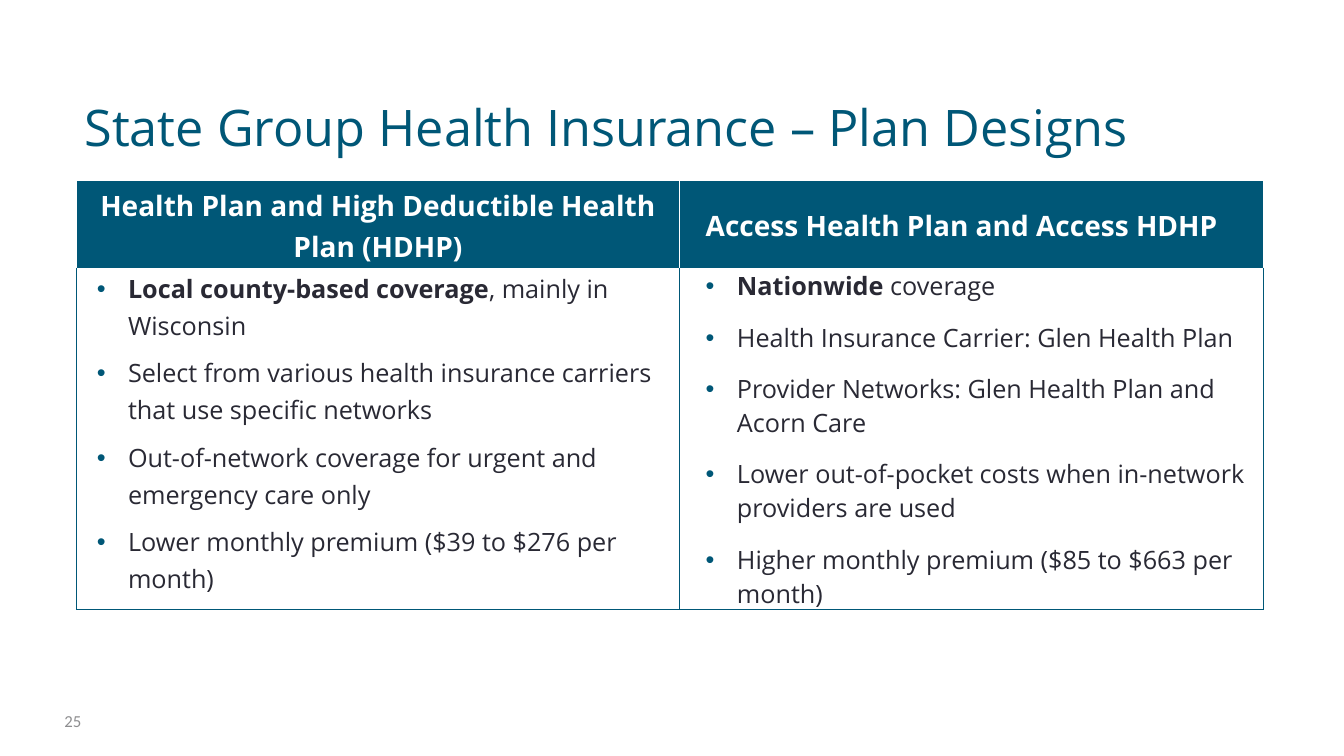
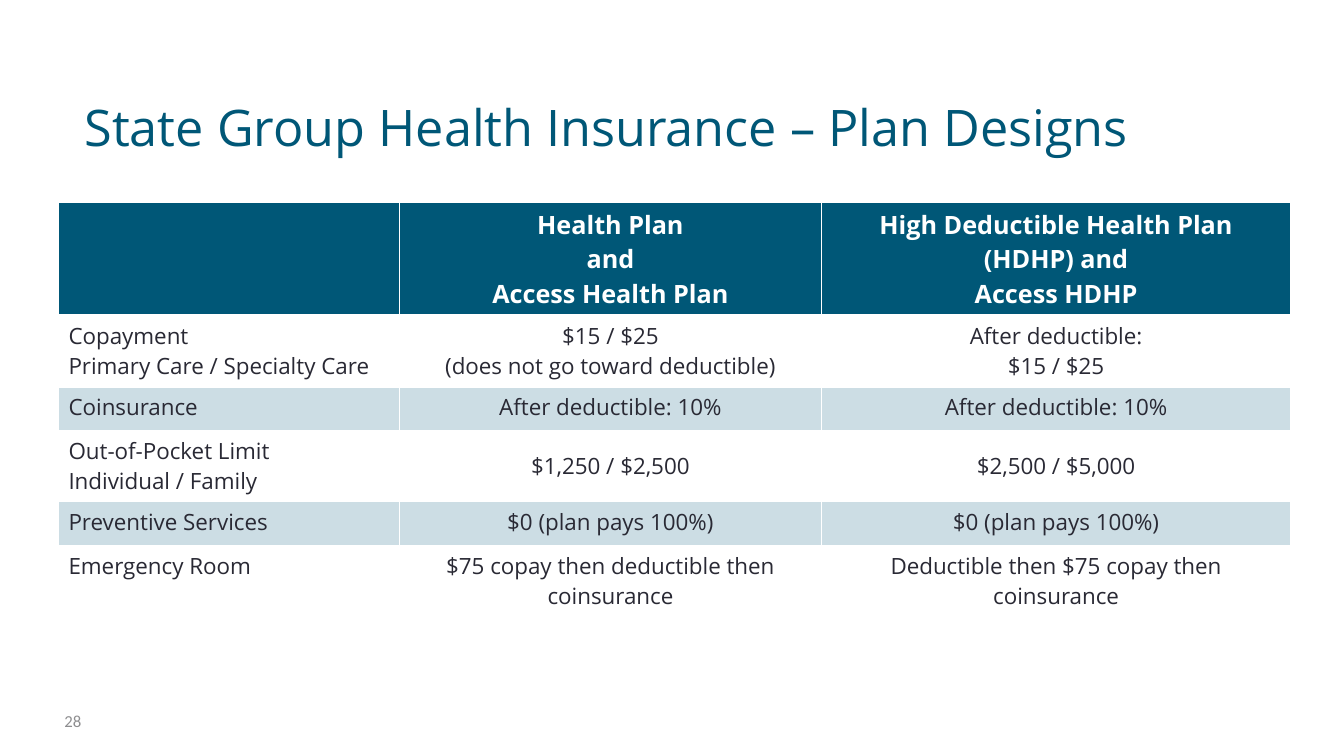
"""Build two slides that compare the state group health insurance plan designs."""
from dataclasses import dataclass, replace

from lxml import etree
from pptx import Presentation
from pptx.dml.color import RGBColor
from pptx.enum.text import MSO_ANCHOR, PP_ALIGN
from pptx.oxml.ns import qn
from pptx.util import Inches, Pt

LEFT, CENTER = PP_ALIGN.LEFT, PP_ALIGN.CENTER
TOP, MIDDLE, BOTTOM = MSO_ANCHOR.TOP, MSO_ANCHOR.MIDDLE, MSO_ANCHOR.BOTTOM
BLANK_LAYOUT = 6


@dataclass(frozen=True)
class Theme:
    teal: str = "005777"
    ink: str = "292934"
    white: str = "FFFFFF"
    band: str = "CCDDE4"
    grey: str = "8E8E90"
    font: str = "Open Sans"
    number_font: str = "Calibri"
    title_size: int = 36
    large_size: int = 20
    medium_size: int = 18
    small_size: int = 16
    number_size: int = 12


THEME = Theme()


@dataclass(frozen=True)
class TextStyle:
    size: int
    color: str
    font: str = THEME.font
    bold: bool = False
    align: PP_ALIGN = LEFT
    margin: float = 0
    indent: float = 0
    before: int = 0
    after: int = 0
    spacing: float = 1.0
    bullet: bool = False


@dataclass(frozen=True)
class Line:
    text: str
    lead: str = ""


@dataclass(frozen=True)
class Edge:
    color: str = THEME.white
    width: int = 1


@dataclass(frozen=True)
class Borders:
    left: Edge = Edge()
    right: Edge = Edge()
    top: Edge = Edge()
    bottom: Edge = Edge()


@dataclass(frozen=True)
class Insets:
    left: float = 0.1
    top: float = 0.05
    right: float = 0.1
    bottom: float = 0.05


@dataclass(frozen=True)
class Cell:
    lines: tuple[Line, ...]
    style: TextStyle
    fill: str | None = None
    anchor: MSO_ANCHOR = TOP
    borders: Borders = Borders()
    insets: Insets = Insets()


@dataclass(frozen=True)
class Grid:
    left: float
    top: float
    columns: tuple[float, ...]
    rows: tuple[float, ...]
    cells: list[list[Cell]]


TITLE = TextStyle(THEME.title_size, THEME.teal)
PAGE_NUMBER = TextStyle(THEME.number_size, THEME.grey, THEME.number_font)
COVERAGE_HEAD = TextStyle(THEME.large_size, THEME.white, bold=True, after=8, spacing=1.07)
LOCAL_BULLET = TextStyle(THEME.medium_size, THEME.ink, margin=0.44, indent=-0.31,
                         after=8, spacing=1.07, bullet=True)
NATIONWIDE_BULLET = replace(LOCAL_BULLET, margin=0.5, before=6, after=6, spacing=1.0)
COST_HEAD = TextStyle(THEME.medium_size, THEME.white, bold=True, align=CENTER)
COST_LABEL = TextStyle(THEME.small_size, THEME.ink)
COST_VALUE = replace(COST_LABEL, align=CENTER)

NARROW = Insets(0.07, 0.01, 0.07, 0)
TEAL_EDGE = Edge(THEME.teal)
THICK_EDGE = Edge(width=3)
TEAL_FRAME = Borders(TEAL_EDGE, TEAL_EDGE, Edge(), TEAL_EDGE)

SLIDE_TITLE = "State Group Health Insurance – Plan Designs"
LOCAL_LINES = (
    Line(", mainly in Wisconsin", "Local county-based coverage"),
    Line("Select from various health insurance carriers that use specific networks"),
    Line("Out-of-network coverage for urgent and emergency care only"),
    Line("Lower monthly premium ($39 to $276 per month)"),
)
NATIONWIDE_LINES = (
    Line(" coverage", "Nationwide"),
    Line("Health Insurance Carrier: Glen Health Plan"),
    Line("Provider Networks: Glen Health Plan and Acorn Care"),
    Line("Lower out-of-pocket costs when in-network providers are used"),
    Line("Higher monthly premium ($85 to $663 per month)"),
)
COST_HEADINGS = (
    "",
    "Health Plan\nand\nAccess Health Plan",
    "High Deductible Health Plan (HDHP) and\nAccess HDHP",
)
COST_ROWS = (
    ("Copayment\nPrimary Care / Specialty Care",
     "$15 / $25\n(does not go toward deductible)", "After deductible:\n$15 / $25"),
    ("Coinsurance", "After deductible: 10%", "After deductible: 10%"),
    ("Out-of-Pocket Limit\nIndividual / Family", "$1,250 / $2,500", "$2,500 / $5,000"),
    ("Preventive Services", "$0 (plan pays 100%)", "$0 (plan pays 100%)"),
    ("Emergency Room", "$75 copay then deductible then coinsurance",
     "Deductible then $75 copay then coinsurance"),
)
LIMIT_ROW = 2


def split_lines(text: str) -> tuple[Line, ...]:
    return tuple(Line(part) for part in text.split("\n"))


def coverage_grid() -> Grid:
    head = Cell(split_lines("Health Plan and High Deductible Health Plan (HDHP)"),
                replace(COVERAGE_HEAD, align=CENTER), THEME.teal, MIDDLE, insets=NARROW)
    access_head = replace(head, lines=split_lines("Access Health Plan and Access HDHP"),
                          style=replace(COVERAGE_HEAD, margin=0.19))
    local = Cell(LOCAL_LINES, LOCAL_BULLET, borders=TEAL_FRAME, insets=NARROW)
    nationwide = replace(local, lines=NATIONWIDE_LINES, style=NATIONWIDE_BULLET)
    return Grid(0.76, 1.79, (5.98, 5.79), (0.87, 3.39),
                [[head, access_head], [local, nationwide]])


def cost_grid() -> Grid:
    cells = [[Cell(split_lines(text), COST_HEAD, THEME.teal,
                   borders=Borders(bottom=THICK_EDGE)) for text in COST_HEADINGS]]
    for row, texts in enumerate(COST_ROWS):
        fill = THEME.band if row % 2 else THEME.white
        borders = Borders(top=Edge() if row else THICK_EDGE)
        value_anchor = MIDDLE if row == LIMIT_ROW else TOP
        label, *values = texts
        cells.append([Cell(split_lines(label), COST_LABEL, fill, borders=borders)]
                     + [Cell(split_lines(value), COST_VALUE, fill, value_anchor, borders)
                        for value in values])
    return Grid(0.58, 2.01, (3.38, 4.19, 4.65), (1.12, 0.71, 0.43, 0.71, 0.43, 0.74), cells)


def add_bullet(properties) -> None:
    color = etree.SubElement(properties, qn("a:buClr"))
    etree.SubElement(color, qn("a:srgbClr"), val=THEME.teal)
    etree.SubElement(properties, qn("a:buFont"), typeface="Arial")
    etree.SubElement(properties, qn("a:buChar"), char="•")


def write_lines(text_frame, lines: tuple[Line, ...], style: TextStyle) -> None:
    for index, line in enumerate(lines):
        paragraph = text_frame.add_paragraph() if index else text_frame.paragraphs[0]
        properties = paragraph._p.get_or_add_pPr()
        properties.set("marL", str(Inches(style.margin)))
        properties.set("indent", str(Inches(style.indent)))
        if style.bullet:
            add_bullet(properties)
        paragraph.alignment = style.align
        paragraph.line_spacing = style.spacing
        paragraph.space_before = Pt(style.before if index else 0)
        paragraph.space_after = Pt(style.after)
        font = paragraph.font
        font.name, font.size = style.font, Pt(style.size)
        font.color.rgb = RGBColor.from_string(style.color)
        if line.lead:
            lead = paragraph.add_run()
            lead.text = line.lead
            lead.font.bold = True
        else:
            font.bold = style.bold
        if line.text:
            paragraph.add_run().text = line.text


def add_text(slide, box: tuple[float, ...], text: str, style: TextStyle,
             anchor: MSO_ANCHOR, bottom_inset: float) -> None:
    shape = slide.shapes.add_textbox(*map(Inches, box))
    text_frame = shape.text_frame
    text_frame.word_wrap = True
    text_frame.vertical_anchor = anchor
    text_frame.margin_bottom = Inches(bottom_inset)
    write_lines(text_frame, split_lines(text), style)


def draw_borders(cell, borders: Borders) -> None:
    properties = cell._tc.get_or_add_tcPr()
    sides = (("a:lnL", borders.left), ("a:lnR", borders.right),
             ("a:lnT", borders.top), ("a:lnB", borders.bottom))
    for tag, edge in sides:
        line = etree.SubElement(properties, qn(tag), w=str(Pt(edge.width)))
        fill = etree.SubElement(line, qn("a:solidFill"))
        etree.SubElement(fill, qn("a:srgbClr"), val=edge.color)


def fill_cell(target, cell: Cell) -> None:
    draw_borders(target, cell.borders)
    if cell.fill:
        target.fill.solid()
        target.fill.fore_color.rgb = RGBColor.from_string(cell.fill)
    else:
        target.fill.background()
    target.vertical_anchor = cell.anchor
    target.margin_left = Inches(cell.insets.left)
    target.margin_top = Inches(cell.insets.top)
    target.margin_right = Inches(cell.insets.right)
    target.margin_bottom = Inches(cell.insets.bottom)
    write_lines(target.text_frame, cell.lines, cell.style)


def add_grid(slide, grid: Grid) -> None:
    shape = slide.shapes.add_table(
        len(grid.rows), len(grid.columns), Inches(grid.left), Inches(grid.top),
        Inches(sum(grid.columns)), Inches(sum(grid.rows)))
    table = shape.table
    table.first_row = table.horz_banding = False
    for column, width in zip(table.columns, grid.columns):
        column.width = Inches(width)
    for row, height, cells in zip(table.rows, grid.rows, grid.cells):
        row.height = Inches(height)
        for target, cell in zip(row.cells, cells):
            fill_cell(target, cell)


def add_plan_slide(presentation, number: int, grid: Grid) -> None:
    slide = presentation.slides.add_slide(presentation.slide_layouts[BLANK_LAYOUT])
    add_text(slide, (0.74, 0.3, 11.94, 1.25), SLIDE_TITLE, TITLE, BOTTOM, 0)
    add_text(slide, (0.54, 6.95, 0.56, 0.4), str(number), PAGE_NUMBER, MIDDLE, 0.05)
    add_grid(slide, grid)


def main() -> None:
    presentation = Presentation()
    presentation.slide_width, presentation.slide_height = Inches(13.33), Inches(7.5)
    add_plan_slide(presentation, 25, coverage_grid())
    add_plan_slide(presentation, 28, cost_grid())
    presentation.save("out.pptx")


if __name__ == "__main__":
    main()
